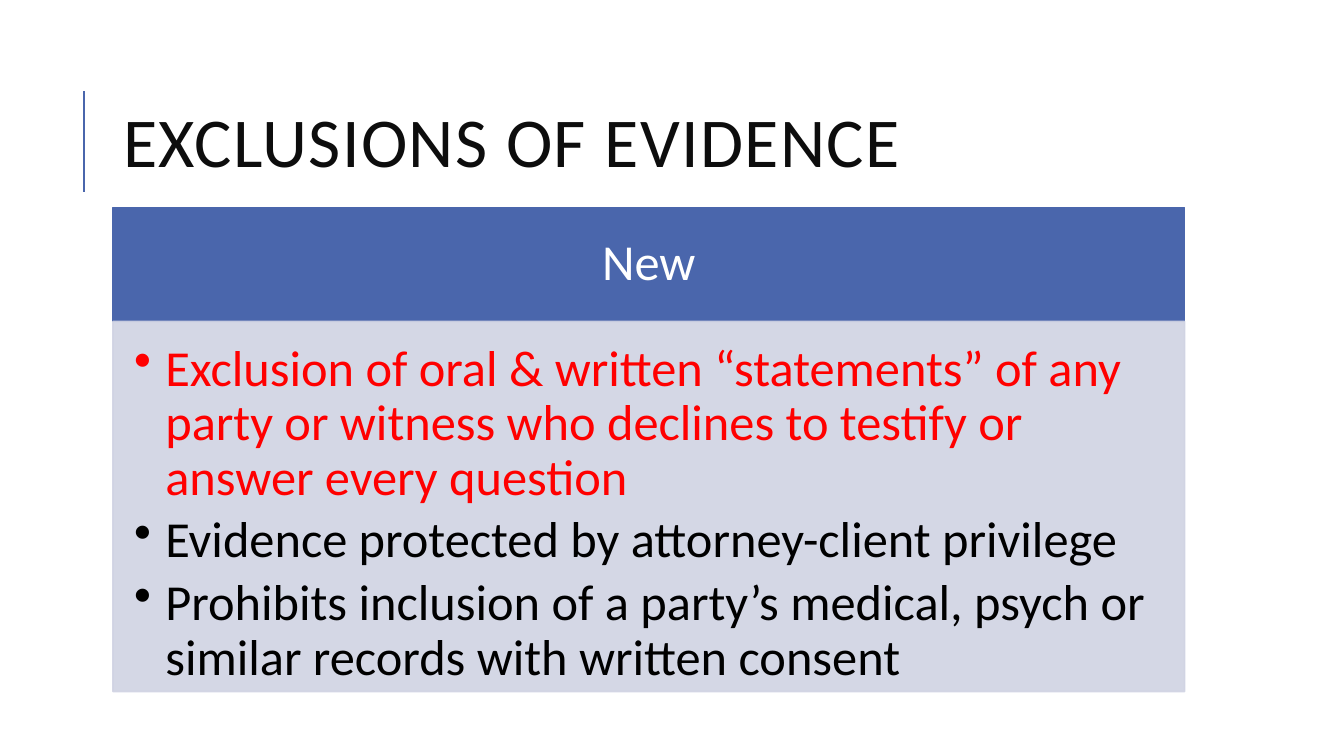
from dataclasses import dataclass

from lxml.etree import SubElement
from pptx import Presentation
from pptx.dml.color import RGBColor
from pptx.enum.shapes import MSO_CONNECTOR, MSO_SHAPE
from pptx.enum.text import MSO_ANCHOR, MSO_AUTO_SIZE, PP_ALIGN
from pptx.oxml.ns import qn
from pptx.util import Inches, Pt

TITLE = "EXCLUSIONS OF EVIDENCE"
HEADING = "New"
EXCLUSIONS = [
    ("Exclusion of oral & written “statements” of any party or witness "
     "who declines to testify or answer every question", "alert"),
    ("Evidence protected by attorney-client privilege", "body"),
    ("Prohibits inclusion of a party’s medical, psych or similar records "
     "with written consent", "body"),
]


@dataclass(frozen=True)
class Theme:
    font: str = "Calibri"
    title_size: int = 50
    text_size: int = 36
    title: str = "0D0D0D"
    accent: str = "4A66AC"
    panel: str = "D0D3E3"
    heading: str = "FFFFFF"
    alert: str = "FF0000"
    body: str = "000000"


THEME = Theme()
LEFT, WIDTH = 1.12, 10.63
HEADING_TOP, HEADING_HEIGHT = 2.06, 1.13
PANEL_HEIGHT = 3.67
BULLET_INDENT = 0.31


def color(name):
    return RGBColor.from_string(getattr(THEME, name))


def format_paragraph(paragraph, size, color_name, line_spacing, alignment=PP_ALIGN.LEFT):
    paragraph.alignment = alignment
    paragraph.line_spacing = line_spacing
    for run in paragraph.runs:
        run.font.name = THEME.font
        run.font.size = Pt(size)
        run.font.color.rgb = color(color_name)


def set_frame(frame, anchor, margins):
    frame.word_wrap = True
    frame.auto_size = MSO_AUTO_SIZE.NONE
    frame.vertical_anchor = anchor
    (frame.margin_left, frame.margin_top,
     frame.margin_right, frame.margin_bottom) = map(Inches, margins)


def add_panel(slide, top, height, color_name, opacity=100):
    shape = slide.shapes.add_shape(
        MSO_SHAPE.RECTANGLE, Inches(LEFT), Inches(top), Inches(WIDTH), Inches(height))
    shape.shadow.inherit = False
    shape.fill.solid()
    shape.fill.fore_color.rgb = color(color_name)
    shape.line.color.rgb = color(color_name)
    shape.line.width = Pt(1.25)
    if opacity < 100:
        for swatch in shape.element.spPr.iter(qn("a:srgbClr")):
            SubElement(swatch, qn("a:alpha"), val=str(opacity * 1000))
    return shape


def add_title(slide):
    title = slide.shapes.title
    title.left, title.top, title.width, title.height = map(
        Inches, (LEFT, 0.64, WIDTH, 1.64))
    title.text_frame.text = TITLE
    set_frame(title.text_frame, MSO_ANCHOR.MIDDLE, (0.1, 0.05, 0.1, 0.05))
    paragraph = title.text_frame.paragraphs[0]
    format_paragraph(paragraph, THEME.title_size, "title", 0.8)
    paragraph.runs[0].font._element.set("spc", "100")


def add_title_rule(slide):
    rule = slide.shapes.add_connector(
        MSO_CONNECTOR.STRAIGHT, Inches(0.83), Inches(1.9), Inches(0.83), Inches(0.9))
    rule.line.color.rgb = color("accent")
    rule.line.width = Pt(1.5)
    SubElement(rule._element.spPr, qn("a:effectLst"))


def add_heading(slide):
    frame = add_panel(slide, HEADING_TOP, HEADING_HEIGHT, "accent").text_frame
    frame.text = HEADING
    set_frame(frame, MSO_ANCHOR.MIDDLE, (0.28, 0.16, 0.28, 0.16))
    format_paragraph(frame.paragraphs[0], THEME.text_size, "heading", 0.9, PP_ALIGN.CENTER)


def add_exclusions(slide):
    top = HEADING_TOP + HEADING_HEIGHT
    frame = add_panel(slide, top, PANEL_HEIGHT, "panel", opacity=90).text_frame
    frame.text = "\n".join(text for text, _ in EXCLUSIONS)
    set_frame(frame, MSO_ANCHOR.TOP, (0.21, 0.21, 0.28, 0.32))
    for paragraph, (_, color_name) in zip(frame.paragraphs, EXCLUSIONS):
        properties = paragraph._p.get_or_add_pPr()
        properties.set("marL", str(Inches(BULLET_INDENT)))
        properties.set("indent", str(-Inches(BULLET_INDENT)))
        SubElement(properties, qn("a:buChar"), char="•")
        format_paragraph(paragraph, THEME.text_size, color_name, 0.9)
        paragraph.space_after = Pt(6)


def main():
    presentation = Presentation()
    presentation.slide_width = Inches(13.33)
    presentation.slide_height = Inches(7.5)
    slide = presentation.slides.add_slide(presentation.slide_layouts[5])
    add_title_rule(slide)
    add_title(slide)
    add_heading(slide)
    add_exclusions(slide)
    presentation.save("out.pptx")


if __name__ == "__main__":
    main()
